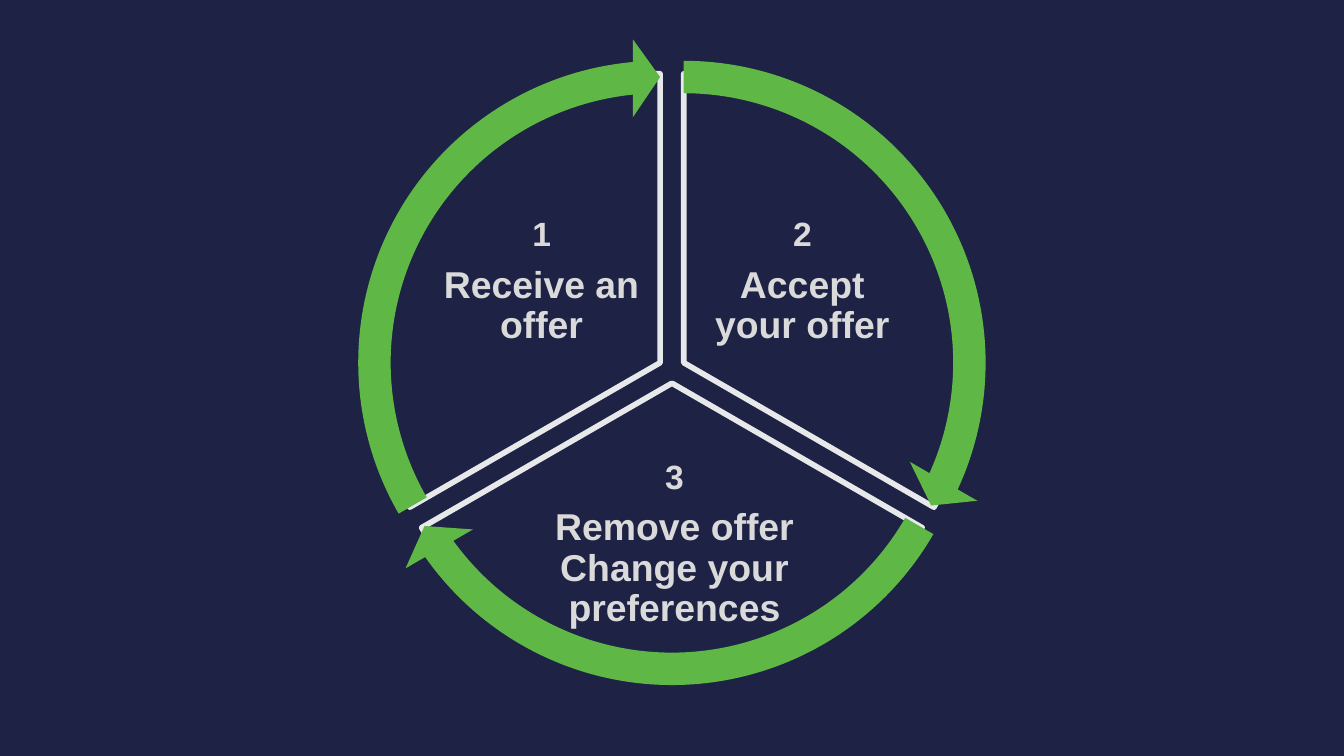
import math
from dataclasses import dataclass

import lxml.etree
import pptx
import pptx.dml.color
import pptx.enum.shapes
import pptx.enum.text
import pptx.oxml.ns
import pptx.util

Pt = pptx.util.Pt
SHAPES = pptx.enum.shapes.MSO_SHAPE

NAVY, GREEN, WHITE, GREY = "1E2245", "5FB846", "E7E8E9", "DADADA"
CENTRE_X, CENTRE_Y = 360, 198
GAP = 7.3
PIE_SIZE = 309.6
ARROW_SIZE = 347.8
ANGLE_UNIT = 0.6
ARROW_HEAD = 3.28


@dataclass
class Step:
    number: str
    label: str
    start: int
    left: float
    top: float
    width: float
    height: float

    @property
    def end(self) -> int:
        return (self.start + 120) % 360

    @property
    def centre(self) -> tuple[float, float]:
        middle = math.radians(self.start + 60)
        return CENTRE_X + GAP * math.cos(middle), CENTRE_Y + GAP * math.sin(middle)


STEPS = [
    Step("2", "Accept your offer", 270, 374.4, 105.1, 110.9, 92.2),
    Step("3", "Remove offer Change your preferences", 30, 278.6, 251.3, 165.6, 81.4),
    Step("1", "Receive an offer", 150, 234.7, 105.1, 110.9, 92.2),
]


def colour(value: str) -> pptx.dml.color.RGBColor:
    return pptx.dml.color.RGBColor.from_string(value)


def apply(target, values: dict) -> None:
    for name, value in values.items():
        setattr(target, name, value)


def add_round_shape(slide, kind, step: Step, size: float, fill: str, adjustments: list[float]):
    x, y = step.centre
    shape = slide.shapes.add_shape(kind, Pt(x - size / 2), Pt(y - size / 2), Pt(size), Pt(size))
    shape.shadow.inherit = False
    shape.fill.solid()
    shape.fill.fore_color.rgb = colour(fill)
    for index, value in enumerate(adjustments):
        shape.adjustments[index] = value
    return shape


def add_pie(slide, step: Step) -> None:
    angles = [step.start * ANGLE_UNIT, step.end * ANGLE_UNIT]
    shape = add_round_shape(slide, SHAPES.PIE, step, PIE_SIZE, NAVY, angles)
    shape.line.color.rgb = colour(WHITE)
    shape.line.width = Pt(3)


def add_arrow(slide, step: Step) -> None:
    end = step.end * ANGLE_UNIT - ARROW_HEAD
    adjustments = [0.05, ARROW_HEAD, end, step.start * ANGLE_UNIT, 0.06]
    shape = add_round_shape(slide, SHAPES.CIRCULAR_ARROW, step, ARROW_SIZE, GREEN, adjustments)
    shape.line.fill.background()


def add_label(slide, step: Step) -> None:
    box = slide.shapes.add_textbox(Pt(step.left), Pt(step.top), Pt(step.width), Pt(step.height))
    frame = box.text_frame
    margins = {f"margin_{side}": Pt(2) for side in ("left", "top", "right", "bottom")}
    apply(frame, {"word_wrap": True, "vertical_anchor": pptx.enum.text.MSO_ANCHOR.MIDDLE, **margins})
    lines = [(frame.paragraphs[0], step.number, 18), (frame.add_paragraph(), step.label, 20)]
    for paragraph, text, size in lines:
        apply(paragraph, {"alignment": pptx.enum.text.PP_ALIGN.CENTER, "line_spacing": 0.9})
        properties = paragraph._p.get_or_add_pPr()
        after = lxml.etree.SubElement(properties, pptx.oxml.ns.qn("a:spcAft"))
        lxml.etree.SubElement(after, pptx.oxml.ns.qn("a:spcPct"), val="35000")
        run = paragraph.add_run()
        run.text = text
        apply(run.font, {"name": "Arial", "size": Pt(size), "bold": True})
        run.font.color.rgb = colour(GREY)


def main() -> None:
    presentation = pptx.Presentation()
    apply(presentation, {"slide_width": Pt(720), "slide_height": Pt(405)})
    slide = presentation.slides.add_slide(presentation.slide_layouts[6])
    slide.background.fill.solid()
    slide.background.fill.fore_color.rgb = colour(NAVY)
    for step in STEPS:
        add_pie(slide, step)
        add_label(slide, step)
    for step in STEPS:
        add_arrow(slide, step)
    presentation.save("out.pptx")


if __name__ == "__main__":
    main()
